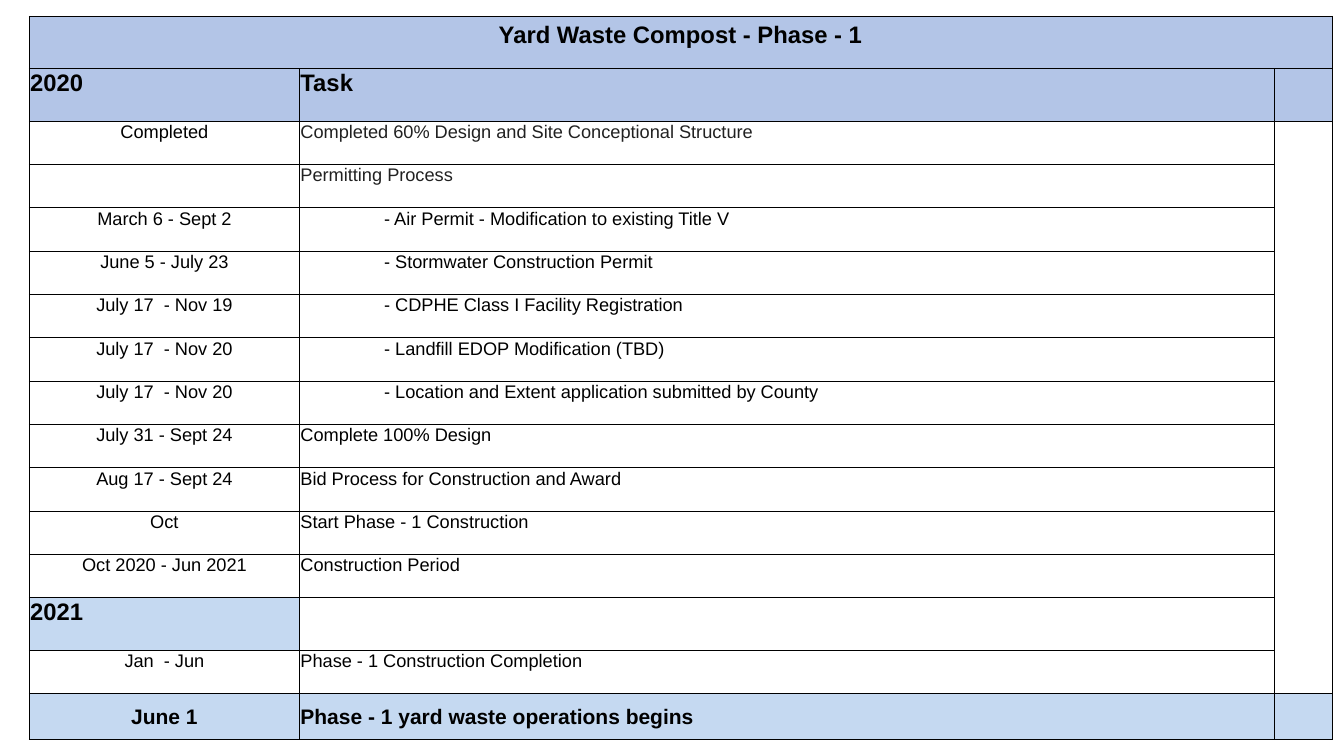
from dataclasses import dataclass

import lxml.etree
import pptx
import pptx.dml.color
import pptx.enum.text
import pptx.oxml.ns
import pptx.table
import pptx.util

Inches = pptx.util.Inches
Align = pptx.enum.text.PP_ALIGN
Anchor = pptx.enum.text.MSO_ANCHOR

COLORS = {"ink": "000000", "soft": "212121", "head": "B3C5E7", "year": "C5D9F1"}
WIDTHS = (2.68, 9.67, 0.57)
LEFT, TOP = 0.29, 0.16
INSET, INDENT = 0.01, 0.84


@dataclass
class Look:
    """The format shared by the cells of one kind of row."""
    height: float = 0.43
    size: int = 13
    bold: bool = False
    fills: tuple[str, str, str] = ("", "", "")
    align: Align = Align.CENTER
    anchor: Anchor = Anchor.TOP
    ink: str = "ink"
    indent: float = INSET
    side: str = "LR"  # edges drawn on the last cell


@dataclass
class Row:
    date: str
    task: str
    look: Look


ALL = "LRTB"
TITLE = Look(0.52, 17, True, ("head",) * 3, side=ALL)
HEAD = Look(0.52, 17, True, ("head",) * 3, Align.LEFT, side=ALL)
FIRST = Look(ink="soft", side="LRT")
SOFT = Look(ink="soft")
TASK = Look()
STEP = Look(indent=INDENT)
YEAR = Look(0.52, 17, True, ("year", "", ""), Align.LEFT)
LAST = Look(side="LRB")
START = Look(0.46, 15, True, ("year",) * 3, anchor=Anchor.MIDDLE, side=ALL)

ROWS = [
    Row("Yard Waste Compost - Phase - 1", "", TITLE),
    Row("2020", "Task", HEAD),
    Row("Completed", "Completed 60% Design and Site Conceptional Structure", FIRST),
    Row("", "Permitting Process", SOFT),
    Row("March 6 - Sept 2", "- Air Permit - Modification to existing Title V", STEP),
    Row("June 5 - July 23", "- Stormwater Construction Permit", STEP),
    Row("July 17  - Nov 19", "- CDPHE Class I Facility Registration", STEP),
    Row("July 17  - Nov 20", "- Landfill EDOP Modification (TBD)", STEP),
    Row("July 17  - Nov 20", "- Location and Extent application submitted by County", STEP),
    Row("July 31 - Sept 24", "Complete 100% Design", TASK),
    Row("Aug 17 - Sept 24", "Bid Process for Construction and Award", TASK),
    Row("Oct", "Start Phase - 1 Construction", TASK),
    Row("Oct 2020 - Jun 2021", "Construction Period", TASK),
    Row("2021", "", YEAR),
    Row("Jan  - Jun", "Phase - 1 Construction Completion", LAST),
    Row("June 1", "Phase - 1 yard waste operations begins", START),
]


def rgb(name: str) -> pptx.dml.color.RGBColor:
    return pptx.dml.color.RGBColor.from_string(COLORS[name])


def draw_edges(cell: pptx.table._Cell, edges: str) -> None:
    """Rule the named edges (L, R, T, B) and clear the others."""
    qn = pptx.oxml.ns.qn
    props = cell._tc.get_or_add_tcPr()
    for edge in ALL:
        line = lxml.etree.SubElement(props, qn(f"a:ln{edge}"), w=str(pptx.util.Pt(0.5)))
        if edge in edges:
            fill = lxml.etree.SubElement(line, qn("a:solidFill"))
            lxml.etree.SubElement(fill, qn("a:srgbClr"), val=COLORS["ink"])
        else:
            lxml.etree.SubElement(line, qn("a:noFill"))


def fill_cell(cell: pptx.table._Cell, color: str) -> None:
    if color:
        cell.fill.solid()
        cell.fill.fore_color.rgb = rgb(color)
    else:
        cell.fill.background()


def write(cell: pptx.table._Cell, text: str, look: Look, align: Align, ink: str) -> None:
    cell.vertical_anchor = look.anchor
    cell.text_frame.text = text
    para = cell.text_frame.paragraphs[0]
    para.alignment = align
    for font in (para.font, *(run.font for run in para.runs)):
        font.name = "Arial"
        font.size = pptx.util.Pt(look.size)
        font.bold = look.bold
        font.color.rgb = rgb(ink)


def set_insets(cell: pptx.table._Cell, left: float, top: float, right: float, bottom: float) -> None:
    cell.margin_left, cell.margin_top = Inches(left), Inches(top)
    cell.margin_right, cell.margin_bottom = Inches(right), Inches(bottom)


def draw_row(table: pptx.table.Table, index: int, row: Row) -> None:
    look = row.look
    table.rows[index].height = Inches(look.height)
    texts = (row.date, row.task, "")
    aligns = (look.align, Align.LEFT, Align.LEFT)
    inks = ("ink", look.ink, "ink")
    lefts = (INSET, look.indent, INSET)
    edges = (ALL, ALL, look.side)
    for col in range(len(WIDTHS)):
        cell = table.cell(index, col)
        draw_edges(cell, edges[col])
        fill_cell(cell, look.fills[col])
        set_insets(cell, lefts[col], INSET, INSET, 0)
        write(cell, texts[col], look, aligns[col], inks[col])


def main() -> None:
    deck = pptx.Presentation()
    deck.slide_width, deck.slide_height = Inches(13.33), Inches(7.5)
    slide = deck.slides.add_slide(deck.slide_layouts[6])
    high = sum(row.look.height for row in ROWS)
    frame = slide.shapes.add_table(len(ROWS), len(WIDTHS), Inches(LEFT), Inches(TOP),
                                   Inches(sum(WIDTHS)), Inches(high))
    table = frame.table
    table.first_row = table.horz_banding = False
    for column, width in zip(table.columns, WIDTHS):
        column.width = Inches(width)
    for index, row in enumerate(ROWS):
        draw_row(table, index, row)
    title = table.cell(0, 0)
    title.merge(table.cell(0, len(WIDTHS) - 1))
    set_insets(title, 0.12, 0.06, 0.12, 0.06)
    deck.save("out.pptx")


if __name__ == "__main__":
    main()
